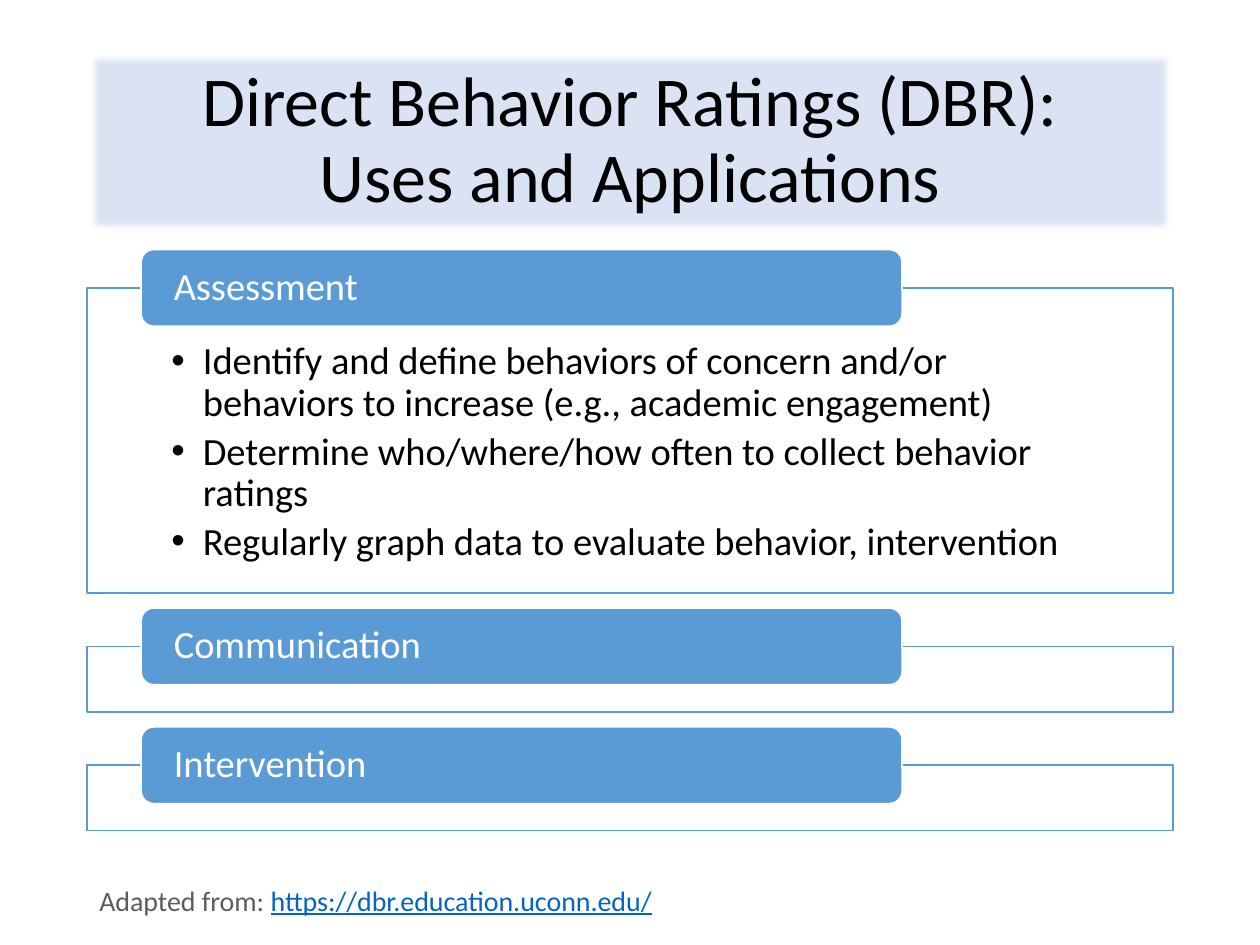
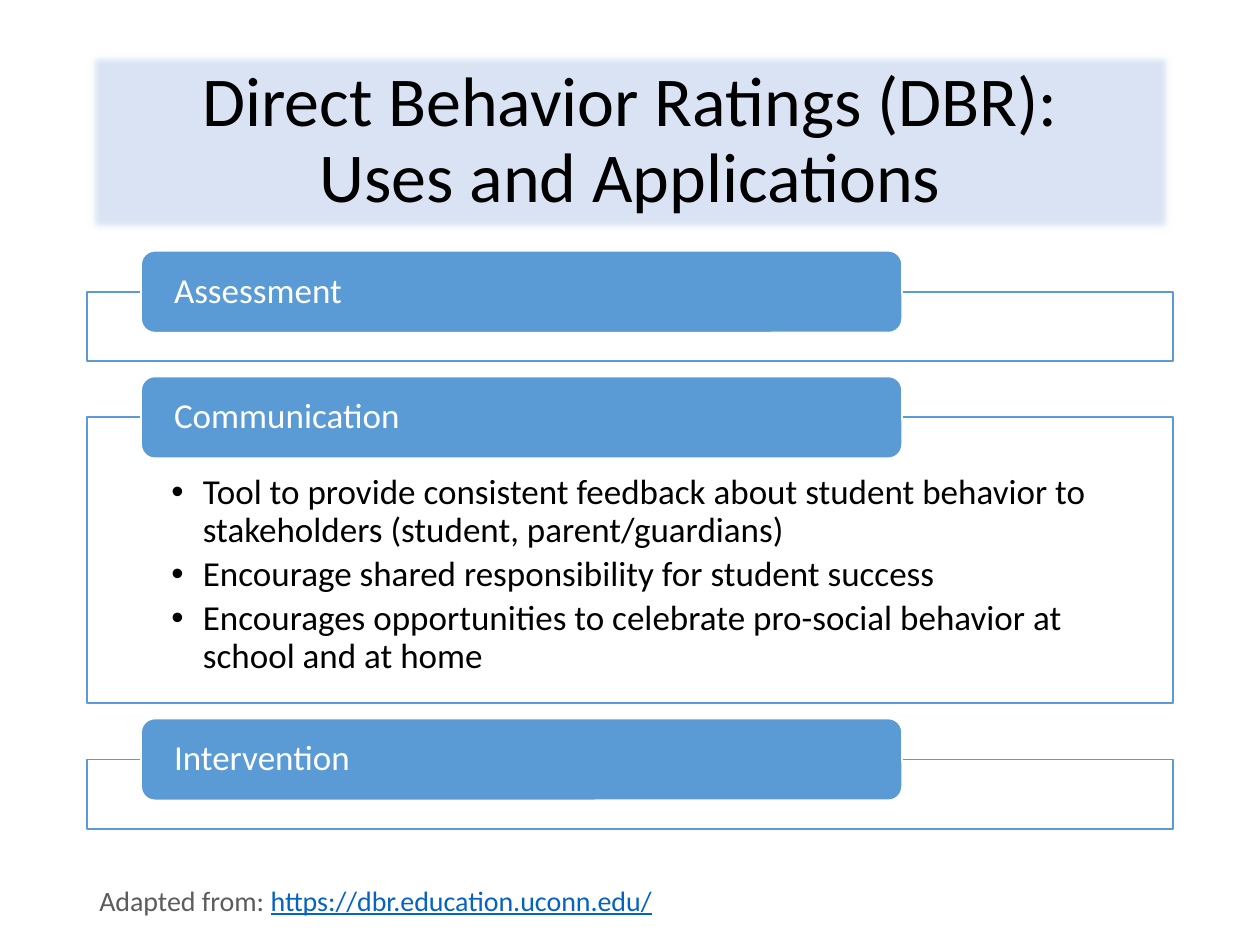
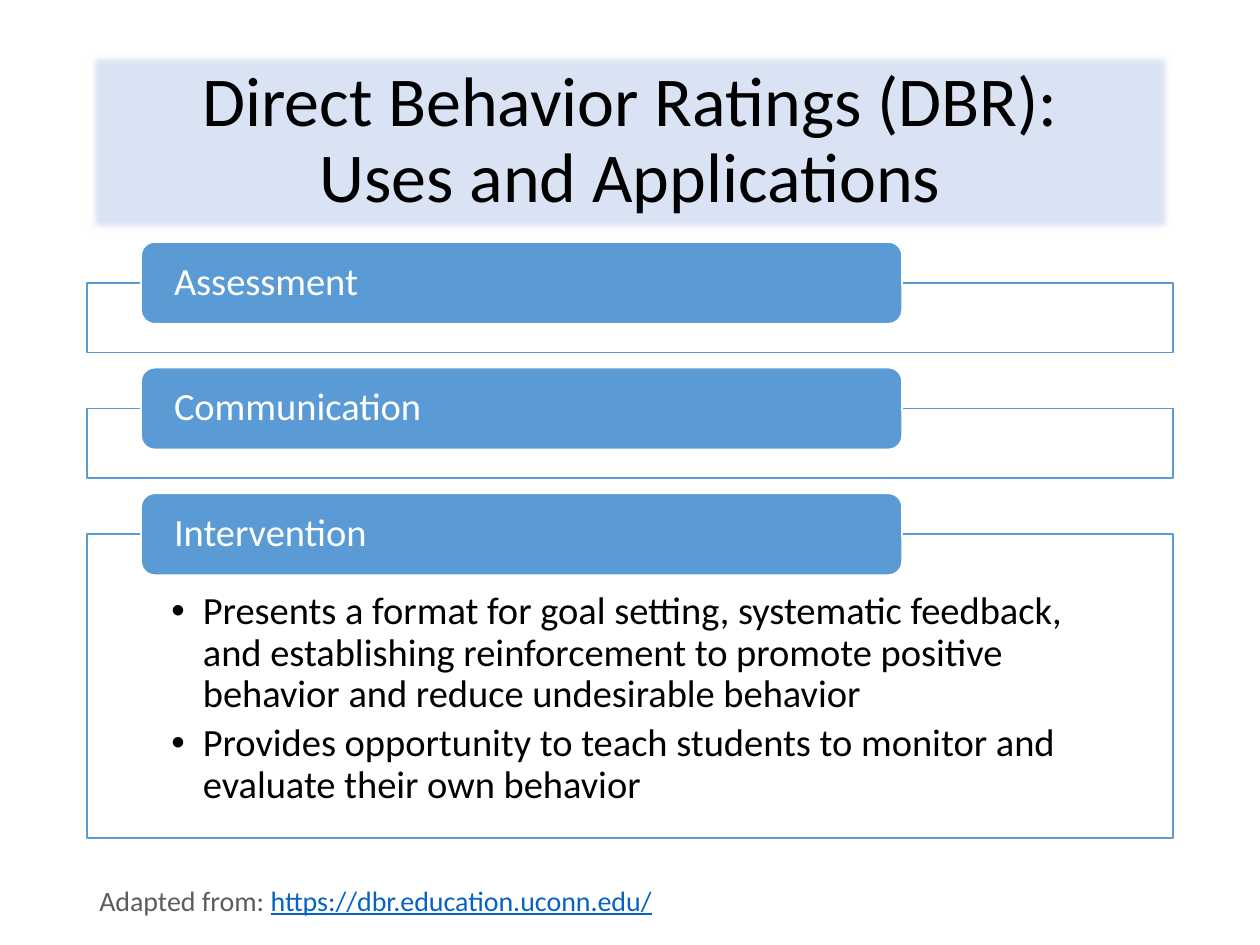
"""Build three slides on the uses of Direct Behavior Ratings."""
from lxml import etree
from pptx import Presentation
from pptx.dml.color import RGBColor
from pptx.enum.shapes import MSO_SHAPE
from pptx.enum.text import MSO_ANCHOR, MSO_AUTO_SIZE, PP_ALIGN
from pptx.oxml.ns import qn
from pptx.util import Inches, Pt

RECT, ROUND = MSO_SHAPE.RECTANGLE, MSO_SHAPE.ROUNDED_RECTANGLE
TOP, MIDDLE = MSO_ANCHOR.TOP, MSO_ANCHOR.MIDDLE
LEFT, CENTER = PP_ALIGN.LEFT, PP_ALIGN.CENTER
FIT = MSO_AUTO_SIZE.SHAPE_TO_FIT_TEXT

COLORS = {"band": "DAE3F3", "blue": "5B9BD5", "white": "FFFFFF",
          "black": "000000", "gray": "5C5C5C", "link": "0563C1"}
FONT = "Calibri"
EDGE, WIDTH = 0.69, 8.62
GAP = 0.12
TITLE = "Direct Behavior Ratings (DBR):\nUses and Applications"
SOURCE = [("Adapted from: ", "gray", False),
          ("https://dbr.education.uconn.edu/", "link", True)]
TOPICS = ["Assessment", "Communication", "Intervention"]
SLIDES = [
    {"open": "Assessment", "top": 1.98, "tag": 0.61, "tall": 2.42, "size": 22,
     "points": [
         "Identify and define behaviors of concern and/or behaviors to "
         "increase (e.g., academic engagement)",
         "Determine who/where/how often to collect behavior ratings",
         "Regularly graph data to evaluate behavior, intervention"]},
    {"open": "Communication", "top": 1.99, "tag": 0.65, "tall": 2.27, "size": 20,
     "points": [
         "Tool to provide consistent feedback about student behavior to "
         "stakeholders (student, parent/guardians)",
         "Encourage shared responsibility for student success",
         "Encourages opportunities to celebrate pro-social behavior at "
         "school and at home"]},
    {"open": "Intervention", "top": 1.92, "tag": 0.65, "tall": 2.41, "size": 22,
     "points": [
         "Presents a format for goal setting, systematic feedback, and "
         "establishing reinforcement to promote positive behavior and "
         "reduce undesirable behavior",
         "Provides opportunity to teach students to monitor and evaluate "
         "their own behavior"]},
]


def paint(name):
    """Return the named colour."""
    return RGBColor.from_string(COLORS[name])


def apply(item, values):
    """Set each value as an attribute of the item."""
    for key, value in values.items():
        setattr(item, key, value)


def style(run, size, color, line=None):
    """Set the font of a run."""
    apply(run.font, {"name": FONT, "size": Pt(size), "underline": line})
    run.font.color.rgb = paint(color)


def add_box(slide, kind, area, fill, line=None):
    """Add a filled shape, with a thin line if a colour is given."""
    box = slide.shapes.add_shape(kind, *map(Inches, area))
    box.shadow.inherit = False
    box.fill.solid()
    box.fill.fore_color.rgb = paint(fill)
    if line:
        box.line.color.rgb = paint(line)
        box.line.width = Pt(1)
    else:
        box.line.fill.background()
    return box


def set_frame(box, anchor, sides, top=0, bottom=0):
    """Set the anchor and margins of a shape's text."""
    apply(box.text_frame, {
        "word_wrap": True, "vertical_anchor": anchor,
        "margin_left": Inches(sides), "margin_right": Inches(sides),
        "margin_top": Inches(top), "margin_bottom": Inches(bottom)})


def write(para, text, size, color, align=LEFT, after=0):
    """Write text in a paragraph with tight line spacing."""
    para.text = text
    apply(para, {"alignment": align, "line_spacing": 0.9,
                 "space_after": Pt(after)})
    for run in para.runs:
        style(run, size, color)


def add_bullet(para):
    """Give a paragraph a round bullet with a hanging indent."""
    props = para._p.get_or_add_pPr()
    props.set("marL", str(Inches(0.25)))
    props.set("indent", str(-Inches(0.25)))
    etree.SubElement(props, qn("a:buFont")).set("typeface", "Arial")
    etree.SubElement(props, qn("a:buChar")).set("char", "•")


def add_title(slide):
    """Add the title on a band with soft edges."""
    band = add_box(slide, RECT, (EDGE, 0.4, WIDTH, 1.45), "band")
    soft = band._element.spPr.find(qn("a:effectLst"))
    etree.SubElement(soft, qn("a:softEdge")).set("rad", str(Pt(5)))
    set_frame(band, MIDDLE, 0.1, 0.05, 0.05)
    write(band.text_frame.paragraphs[0], TITLE, 40, "black", CENTER)


def add_panel(slide, top, tall, plan, points):
    """Add an outlined panel with its bullet points."""
    panel = add_box(slide, RECT, (EDGE, top, WIDTH, tall), "white", "blue")
    set_frame(panel, TOP, 0.67, plan["tag"] * 0.7, 0.17)
    frame = panel.text_frame
    for rank, point in enumerate(points):
        para = frame.add_paragraph() if rank else frame.paragraphs[0]
        write(para, point, plan["size"], "black", after=plan["size"] * 0.18)
        add_bullet(para)


def add_tag(slide, topic, top, plan):
    """Add the rounded tag that names a topic."""
    tag = add_box(slide, ROUND, (1.12, top, 6.04, plan["tag"]), "blue", "white")
    set_frame(tag, MIDDLE, 0.23)
    write(tag.text_frame.paragraphs[0], topic, plan["size"], "white")


def add_stack(slide, plan):
    """Stack the topics, with points in the open one."""
    top = plan["top"]
    for topic in TOPICS:
        is_open = topic == plan["open"]
        tall = plan["tall"] if is_open else plan["tag"] * 0.85
        start = top + plan["tag"] / 2
        add_panel(slide, start, tall, plan, plan["points"] if is_open else [])
        add_tag(slide, topic, top, plan)
        top = start + tall + GAP


def add_source(slide):
    """Add the source line at the foot."""
    box = slide.shapes.add_textbox(*map(Inches, (EDGE, 6.96, 4.64, 0.37)))
    apply(box.text_frame, {"word_wrap": False, "auto_size": FIT})
    for text, color, line in SOURCE:
        run = box.text_frame.paragraphs[0].add_run()
        run.text = text
        style(run, 16, color, line)


def main():
    """Build and save the slides."""
    deck = Presentation()
    apply(deck, {"slide_width": Inches(10), "slide_height": Inches(7.5)})
    for plan in SLIDES:
        slide = deck.slides.add_slide(deck.slide_layouts[6])
        add_title(slide)
        add_stack(slide, plan)
        add_source(slide)
    deck.save("out.pptx")


if __name__ == "__main__":
    main()
